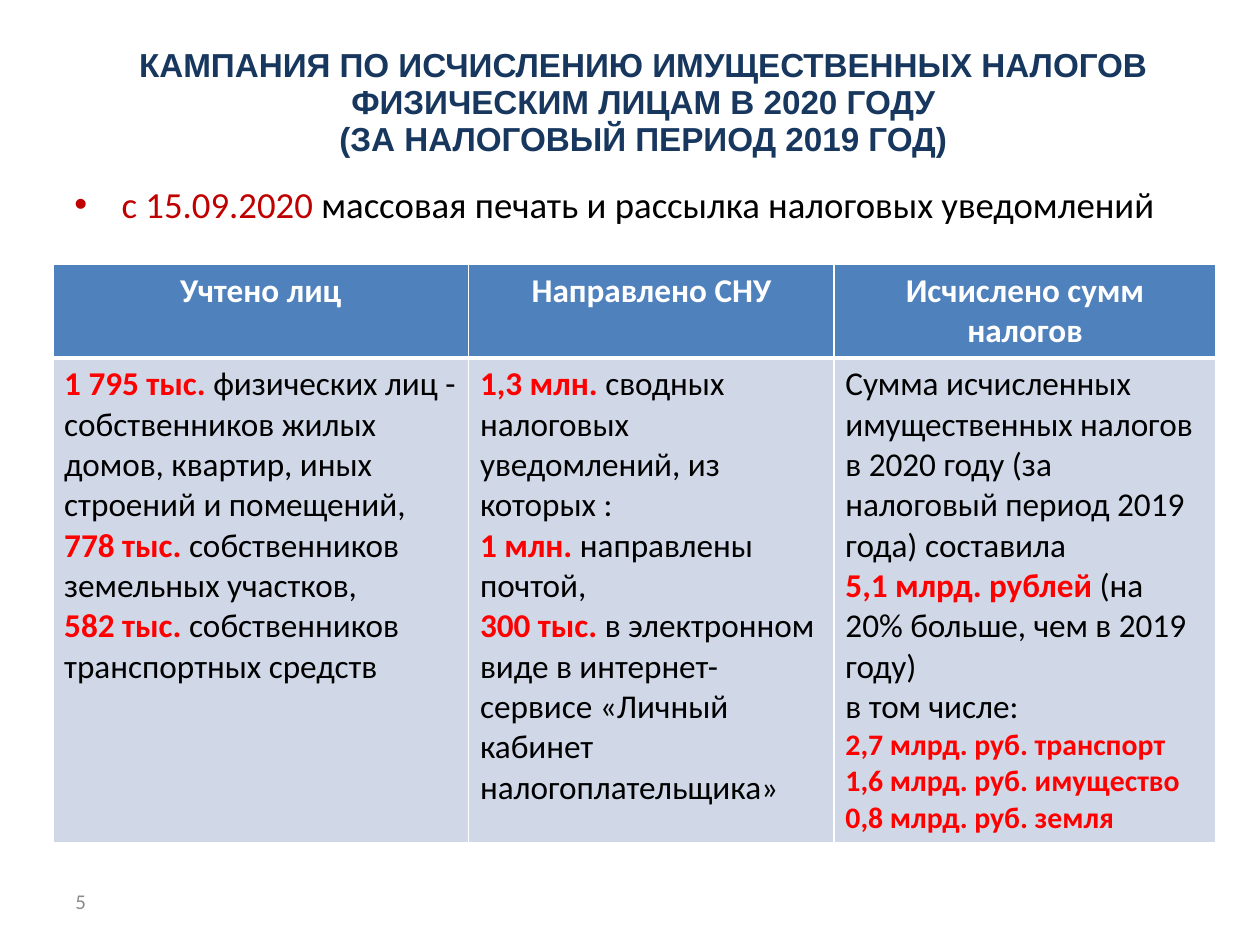
import pptx
import pptx.dml.color
import pptx.enum.text
import pptx.oxml.ns
import pptx.util
import lxml.etree

COLORS = {
    "navy": "17375E", "crimson": "C00000", "red": "FF0000", "black": "000000",
    "white": "FFFFFF", "header": "4F81BD", "body": "D0D8E8", "gray": "8C8C8C",
}
ALIGN = pptx.enum.text.PP_ALIGN
ANCHOR = pptx.enum.text.MSO_ANCHOR
Inches = pptx.util.Inches


def add_run(paragraph, text, size, color, bold=False, font="Calibri"):
    run = paragraph.add_run()
    run.text = text
    run.font.name = font
    run.font.size = pptx.util.Pt(size)
    run.font.bold = bold
    run.font.color.rgb = pptx.dml.color.RGBColor.from_string(COLORS[color])


def style_cell(cell, fill, borders):
    cell.fill.solid()
    cell.fill.fore_color.rgb = pptx.dml.color.RGBColor.from_string(COLORS[fill])
    cell.margin_left = cell.margin_right = Inches(0.09)
    properties = cell._tc.get_or_add_tcPr()
    # Borders come before the fill in the cell properties
    for position, (side, points) in enumerate(borders.items()):
        line = lxml.etree.Element(pptx.oxml.ns.qn(f"a:{side}"), w=str(pptx.util.Pt(points)))
        solid = lxml.etree.SubElement(line, pptx.oxml.ns.qn("a:solidFill"))
        lxml.etree.SubElement(solid, pptx.oxml.ns.qn("a:srgbClr"), val=COLORS["white"])
        properties.insert(position, line)


presentation = pptx.Presentation()
presentation.slide_width, presentation.slide_height = Inches(10), Inches(7.5)
slide = presentation.slides.add_slide(presentation.slide_layouts[1])
title, body = slide.placeholders[0], slide.placeholders[1]

# Title and body placeholders
for shape, box in ((title, (0.49, 0.33, 9.23, 0.77)), (body, (0.49, 1.39, 8.96, 5.65))):
    shape.left, shape.top, shape.width, shape.height = map(Inches, box)
    shape.text_frame.auto_size = pptx.enum.text.MSO_AUTO_SIZE.NONE
    shape.text_frame.vertical_anchor = ANCHOR.TOP

paragraph = title.text_frame.paragraphs[0]
paragraph.alignment = ALIGN.CENTER
paragraph.line_spacing = pptx.util.Pt(21)
add_run(paragraph, "КАМПАНИЯ ПО ИСЧИСЛЕНИЮ ИМУЩЕСТВЕННЫХ НАЛОГОВ ФИЗИЧЕСКИМ ЛИЦАМ В 2020 ГОДУ",
        19, "navy", True, "Arial")
paragraph.add_line_break()
add_run(paragraph, "(ЗА НАЛОГОВЫЙ ПЕРИОД 2019 ГОД)", 19, "navy", True, "Arial")

paragraph = body.text_frame.paragraphs[0]
add_run(paragraph, "с 15.09.2020 ", 21, "crimson")
add_run(paragraph, "массовая печать и рассылка налоговых уведомлений", 21, "black")

# Table: each column holds a heading and paragraphs of (highlight, plain text, size)
columns = [
    (3.3, "Учтено лиц", [
        ("1 795 тыс. ", "физических лиц - собственников жилых домов, квартир, "
                        "иных строений и помещений,", 19),
        ("778 тыс. ", "собственников земельных участков,", 19),
        ("582 тыс. ", "собственников транспортных средств", 19),
    ]),
    (2.9, "Направлено СНУ", [
        ("1,3 млн. ", "сводных налоговых уведомлений, из которых :", 19),
        ("1 млн. ", "направлены почтой,", 19),
        ("300 тыс.", " в электронном виде в интернет-сервисе "
                     "«Личный кабинет налогоплательщика»", 19),
    ]),
    (3.03, "Исчислено сумм налогов", [
        ("", "Сумма исчисленных имущественных налогов в 2020 году "
             "(за налоговый период 2019 года) составила", 19),
        ("5,1 млрд. рублей", " (на 20% больше, чем в 2019 году)", 19),
        ("", "в том числе:", 19),
        ("2,7 млрд. руб. транспорт", "", 17),
        ("1,6 млрд. руб. имущество", "", 17),
        ("0,8 млрд. руб. земля", "", 17),
    ]),
]
row_heights = (0.72, 3.79)
table = slide.shapes.add_table(
    len(row_heights), len(columns), Inches(0.42), Inches(2.1),
    Inches(sum(column[0] for column in columns)), Inches(sum(row_heights))).table
for row, height in zip(table.rows, row_heights):
    row.height = Inches(height)

for index, (width, heading, entries) in enumerate(columns):
    table.columns[index].width = Inches(width)
    header_cell, body_cell = table.cell(0, index), table.cell(1, index)
    style_cell(header_cell, "header", {"lnL": 1, "lnR": 1, "lnT": 1, "lnB": 3})
    style_cell(body_cell, "body", {"lnL": 1, "lnR": 1, "lnT": 3, "lnB": 1})

    paragraph = header_cell.text_frame.paragraphs[0]
    paragraph.alignment = ALIGN.CENTER
    add_run(paragraph, heading, 19, "white", True)

    frame = body_cell.text_frame
    for number, (highlight, plain, size) in enumerate(entries):
        paragraph = frame.add_paragraph() if number else frame.paragraphs[0]
        if highlight:
            add_run(paragraph, highlight, size, "red", True)
        if plain:
            add_run(paragraph, plain, size, "black")

# Slide number
number_box = slide.shapes.add_textbox(Inches(0.5), Inches(6.95), Inches(2.33), Inches(0.4))
number_box.text_frame.word_wrap = True
number_box.text_frame.vertical_anchor = ANCHOR.MIDDLE
add_run(number_box.text_frame.paragraphs[0], "5", 12, "gray")

presentation.save("out.pptx")
